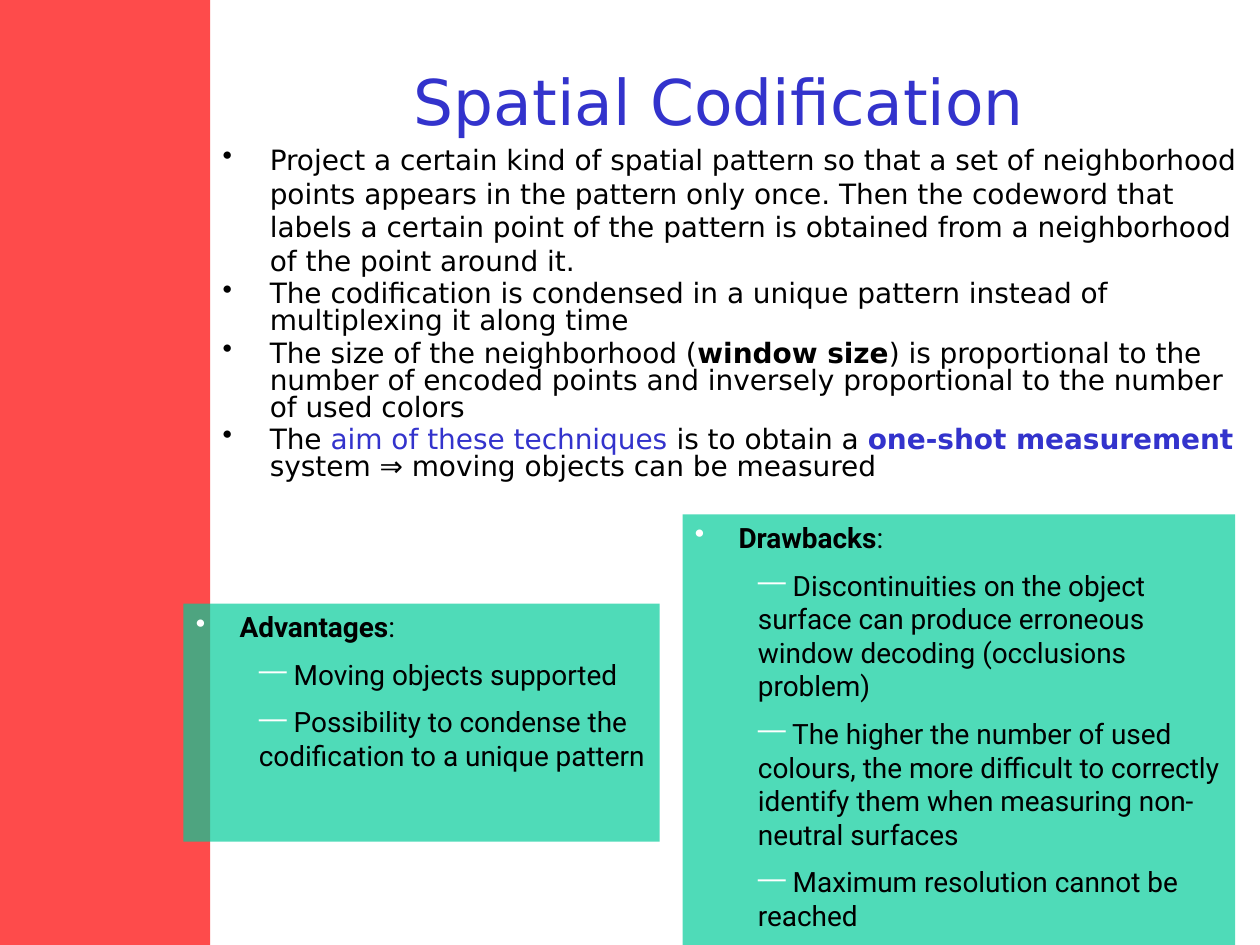
from lxml.etree import SubElement
from pptx import Presentation
from pptx.dml.color import RGBColor
from pptx.enum.shapes import MSO_SHAPE
from pptx.enum.text import MSO_ANCHOR, PP_ALIGN
from pptx.oxml.ns import qn
from pptx.util import Cm, Pt

RED = RGBColor(0xFE, 0x4B, 0x4B)
BLUE = RGBColor(0x33, 0x33, 0xCC)
GREEN = RGBColor(0x00, 0xCC, 0x99)
BLACK = RGBColor(0x00, 0x00, 0x00)
WHITE = RGBColor(0xFF, 0xFF, 0xFF)


def add_bullet(paragraph, character, color, margin, indent):
    properties = paragraph._p.get_or_add_pPr()
    properties.set("marL", str(margin))
    properties.set("indent", str(indent))
    bullet_color = SubElement(properties, qn("a:buClr"))
    SubElement(bullet_color, qn("a:srgbClr"), val=str(color))
    SubElement(properties, qn("a:buChar"), char=character)


def add_runs(paragraph, runs, font_name):
    paragraph.font.name = font_name
    paragraph.font.size = Pt(16)
    paragraph.font.color.rgb = BLACK
    for text, bold, color in runs:
        run = paragraph.add_run()
        run.text = text
        if bold:
            run.font.bold = True
        if color != BLACK:
            run.font.color.rgb = color


presentation = Presentation()
presentation.slide_width = Cm(25.4)
presentation.slide_height = Cm(19.05)
slide = presentation.slides.add_slide(presentation.slide_layouts[6])

# Red side band
band = slide.shapes.add_shape(MSO_SHAPE.RECTANGLE, 0, 0, Cm(4.24), Cm(19.05))
band.shadow.inherit = False
band.fill.solid()
band.fill.fore_color.rgb = RED
band.line.fill.background()

# Title
title = slide.shapes.add_textbox(Cm(4.24), Cm(1.07), Cm(20.52), Cm(1.9))
title.text_frame.word_wrap = True
title.text_frame.vertical_anchor = MSO_ANCHOR.MIDDLE
paragraph = title.text_frame.paragraphs[0]
paragraph.text = "Spatial Codification"
paragraph.alignment = PP_ALIGN.CENTER
paragraph.font.name = "DejaVu Sans"
paragraph.font.size = Pt(36)
paragraph.font.color.rgb = BLUE

# Main points: runs of text, bold, colour
points = [
    [("Project a certain kind of spatial pattern so that a set of neighborhood "
      "points appears in the pattern only once. Then the codeword that labels a "
      "certain point of the pattern is obtained from a neighborhood of the point "
      "around it.", False, BLACK)],
    [("The codification is condensed in a unique pattern instead of "
      "multiplexing it along time", False, BLACK)],
    [("The size of the neighborhood (", False, BLACK),
     ("window size", True, BLACK),
     (") is proportional to the number of encoded points and inversely "
      "proportional to the number of used colors", False, BLACK)],
    [("The ", False, BLACK),
     ("aim of these techniques ", False, BLUE),
     ("is to obtain a ", False, BLACK),
     ("one-shot measurement ", True, BLUE),
     ("system ⇒ moving objects can be measured", False, BLACK)],
]
body = slide.shapes.add_textbox(Cm(4.24), Cm(2.75), Cm(21.16), Cm(8.47))
frame = body.text_frame
frame.word_wrap = True
for index, runs in enumerate(points):
    paragraph = frame.add_paragraph() if index else frame.paragraphs[0]
    add_bullet(paragraph, "•", BLACK, Cm(0.95), Cm(-0.95))
    if index:
        paragraph.space_before = Pt(3.2)
        paragraph.line_spacing = 0.8
    add_runs(paragraph, runs, "DejaVu Sans")

# Advantages and drawbacks: heading, box, items
panels = [
    ("Advantages", (3.7, 12.17, 9.6, 4.8), [
        "Moving objects supported",
        "Possibility to condense the codification to a unique pattern",
    ]),
    ("Drawbacks", (13.76, 10.37, 11.14, 8.82), [
        "Discontinuities on the object surface can produce erroneous window "
        "decoding (occlusions problem)",
        "The higher the number of used colours, the more difficult to correctly "
        "identify them when measuring non-neutral surfaces",
        "Maximum resolution cannot be reached",
    ]),
]
for heading, box, items in panels:
    panel = slide.shapes.add_shape(MSO_SHAPE.RECTANGLE, *[Cm(length) for length in box])
    panel.shadow.inherit = False
    panel.fill.solid()
    panel.fill.fore_color.rgb = GREEN
    fill_color = panel.fill._xPr.find(qn("a:solidFill"))[0]
    SubElement(fill_color, qn("a:alpha"), val="69000")
    panel.line.fill.background()

    frame = panel.text_frame
    frame.word_wrap = True
    frame.vertical_anchor = MSO_ANCHOR.TOP
    paragraph = frame.paragraphs[0]
    paragraph.alignment = PP_ALIGN.LEFT
    add_bullet(paragraph, "•", WHITE, Cm(0.88), Cm(-0.88))
    add_runs(paragraph, [(heading, True, BLACK), (":", False, BLACK)], "Roboto")
    for item in items:
        paragraph = frame.add_paragraph()
        paragraph.level = 1
        paragraph.alignment = PP_ALIGN.LEFT
        add_bullet(paragraph, "―", WHITE, Cm(1.27), 0)
        paragraph.space_before = Pt(8)
        add_runs(paragraph, [(" " + item, False, BLACK)], "Roboto")

presentation.save("out.pptx")
